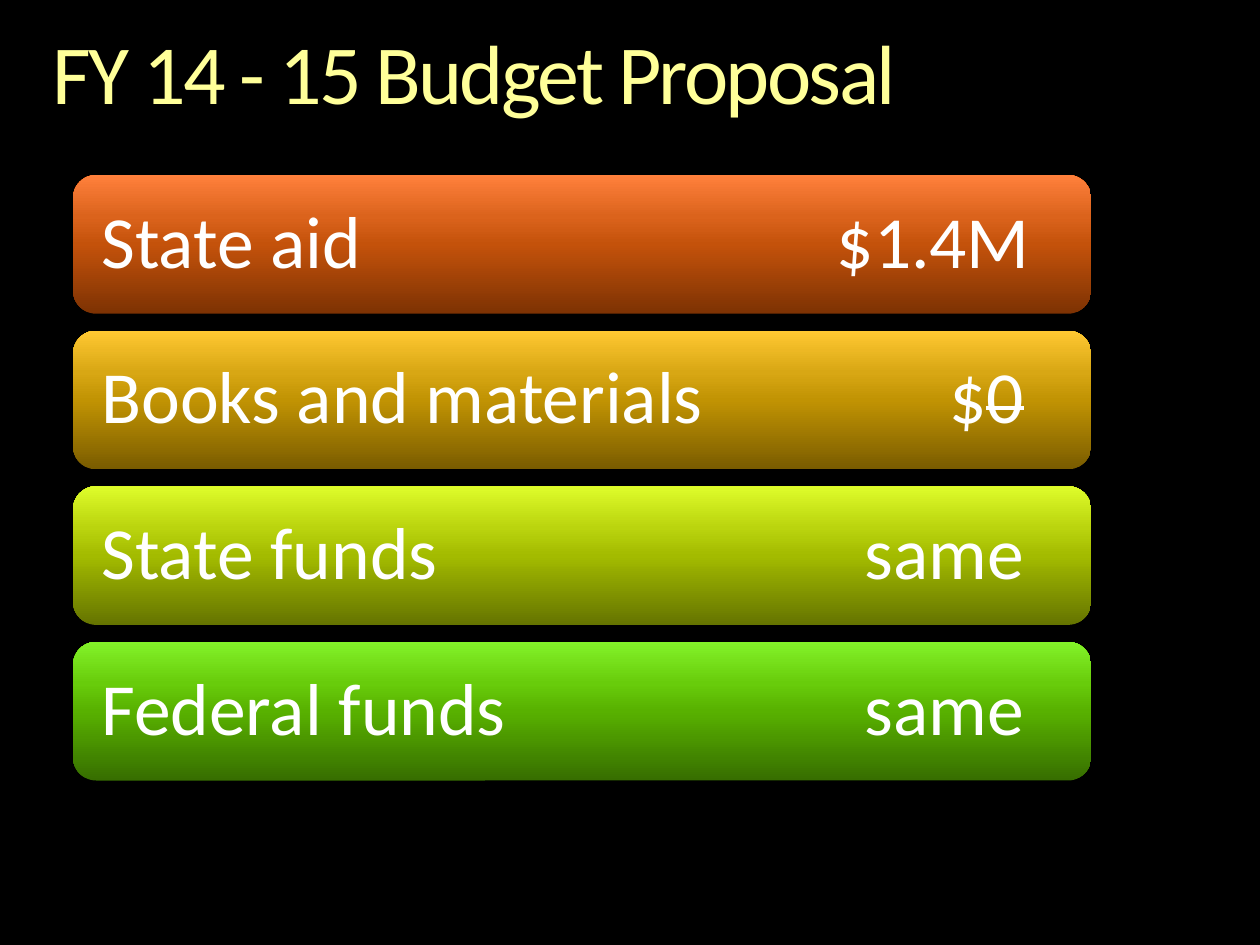
from lxml import etree
from pptx import Presentation
from pptx.dml.color import RGBColor
from pptx.enum.shapes import MSO_SHAPE as Shape
from pptx.enum.text import MSO_ANCHOR as Anchor, MSO_AUTO_SIZE as AutoSize
from pptx.oxml.ns import qn
from pptx.util import Inches, Pt

FONT = "Calibri"
BAR_HEIGHT, BAR_PITCH = 1.1, 1.235
TEXT_INSET = 0.055

# Label, value, struck-out value, tab position, gradient from bottom to top
BUDGET_ROWS = [
    ("State aid", "$1.4M", "", 7.37, ("7D3203", "C4520B", "DB631C", "FF803C")),
    ("Books and materials", "$", "0", 7.32, ("7A5C00", "C19303", "D8A714", "FFC832")),
    ("State funds", "same", "", 7.32, ("657400", "A3BB00", "BAD40E", "DEFC2A")),
    ("Federal funds", "same", "", 7.32, ("376E00", "58B100", "68CC0B", "83F229")),
]


def color(hex_value):
    return RGBColor.from_string(hex_value)


def gradient(stops, angle):
    """Return a gradient fill; stops are (percent, hex colour) pairs."""
    fill = etree.Element(qn("a:gradFill"), rotWithShape="1")
    stop_list = etree.SubElement(fill, qn("a:gsLst"))
    for percent, hex_value in stops:
        stop = etree.SubElement(stop_list, qn("a:gs"), pos=str(percent * 1000))
        etree.SubElement(stop, qn("a:srgbClr"), val=hex_value)
    etree.SubElement(fill, qn("a:lin"), ang=str(angle * 60000), scaled="0")
    return fill


def add_text_box(page, left, top, width, height, inset):
    box = page.shapes.add_textbox(Inches(left), Inches(top), Inches(width), Inches(height))
    frame = box.text_frame
    frame.word_wrap = True
    frame.margin_left = frame.margin_right = Inches(inset)
    frame.margin_top = frame.margin_bottom = Inches(inset)
    frame.paragraphs[0].line_spacing = 0.9
    return frame


def add_span(para, text, size):
    span = para.add_run()
    span.text = text
    span.font.name = FONT
    span.font.size = Pt(size)
    return span


def add_title(page, left, top, width, height):
    frame = add_text_box(page, left, top, width, height, 0)
    frame.auto_size = AutoSize.SHAPE_TO_FIT_TEXT
    span = add_span(frame.paragraphs[0], "FY 14 - 15 Budget Proposal", 48)
    properties = span.font._element
    properties.set("spc", "-150")
    stops = [(0, "FFFFB9"), (36, "FFFF99"), (86, "F6AE1E")]
    properties.insert(0, gradient(stops, 90))


def add_bar(page, left, top, width, height, row):
    label, value, struck, tab_position, colors = row

    # Rounded gradient bar
    bar = page.shapes.add_shape(
        Shape.ROUNDED_RECTANGLE, Inches(left), Inches(top), Inches(width), Inches(height))
    bar.shadow.inherit = False
    bar.line.fill.background()
    outline = bar._element.spPr.find(qn("a:ln"))
    outline.addprevious(gradient(zip((0, 50, 70, 100), colors), 270))

    # Label with a right-aligned value
    frame = add_text_box(page, left + TEXT_INSET, top + TEXT_INSET,
                         width - 2 * TEXT_INSET, height - 2 * TEXT_INSET, 0.17)
    frame.vertical_anchor = Anchor.MIDDLE
    para = frame.paragraphs[0]
    tabs = etree.SubElement(para._p.get_or_add_pPr(), qn("a:tabLst"))
    etree.SubElement(tabs, qn("a:tab"), pos=str(Inches(tab_position)), algn="r")
    spans = [add_span(para, f"{label}\t{value}", 42)]
    if struck:
        spans.append(add_span(para, struck, 42))
        spans[-1].font._element.set("strike", "sngStrike")
    for span in spans:
        span.font.color.rgb = color("FFFFFF")


def add_budget_bars(page, left, top, width):
    for index, row in enumerate(BUDGET_ROWS):
        add_bar(page, left, top + index * BAR_PITCH, width, BAR_HEIGHT, row)


def main():
    deck = Presentation()
    deck.slide_width, deck.slide_height = Inches(10), Inches(7.5)
    page = deck.slides.add_slide(deck.slide_layouts[6])
    page.background.fill.solid()
    page.background.fill.fore_color.rgb = color("000000")
    add_title(page, 0.42, 0.25, 9.17, 0.73)
    add_budget_bars(page, 0.58, 1.39, 8.08)
    deck.save("out.pptx")


if __name__ == "__main__":
    main()
